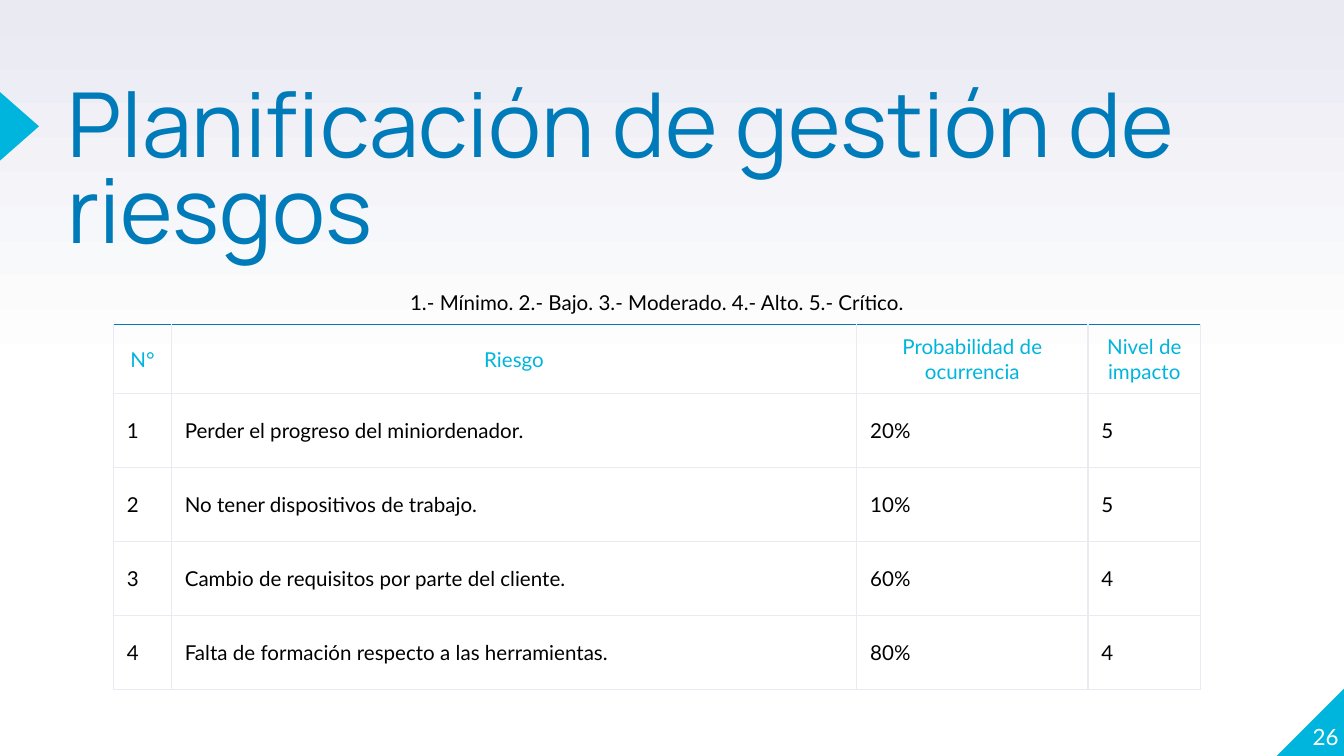
from typing import NamedTuple

from lxml.etree import SubElement
from pptx import Presentation
from pptx.dml.color import RGBColor
from pptx.enum.shapes import MSO_SHAPE as SHAPE
from pptx.enum.text import MSO_ANCHOR as ANCHOR, MSO_AUTO_SIZE as AUTO, PP_ALIGN as ALIGN
from pptx.oxml.ns import qn
from pptx.util import Pt

PX = 4572  # 200 px to the inch

WHITE = RGBColor(0xFF, 0xFF, 0xFF)
BLACK = RGBColor(0x00, 0x00, 0x00)
LAVENDER = RGBColor(0xE9, 0xEA, 0xF2)
CYAN = RGBColor(0x00, 0xB5, 0xDD)
BLUE = RGBColor(0x00, 0x7B, 0xB9)

HEADERS = ("N°", "Riesgo", "Probabilidad de ocurrencia", "Nivel de impacto")
COL_WIDTHS = (86, 1020, 344, 168)
HEADER_HEIGHT, ROW_HEIGHT = 103, 110


class Box(NamedTuple):
    x: int
    y: int
    w: int
    h: int

    def emu(self) -> list[int]:
        return [v * PX for v in self]


class Risk(NamedTuple):
    number: int
    name: str
    probability: str
    impact: int


class Style(NamedTuple):
    size: int
    color: RGBColor
    font: str = "Lato"
    align: ALIGN = ALIGN.LEFT
    spacing: float = 1.0


RISKS = (
    Risk(1, "Perder el progreso del miniordenador.", "20%", 5),
    Risk(2, "No tener dispositivos de trabajo.", "10%", 5),
    Risk(3, "Cambio de requisitos por parte del cliente.", "60%", 4),
    Risk(4, "Falta de formación respecto a las herramientas.", "80%", 4),
)
TITLE = Style(48, BLUE, "Manrope", spacing=0.8)
PAGE = Style(12, WHITE, align=ALIGN.RIGHT)
SCALE = Style(11, BLACK, align=ALIGN.CENTER, spacing=1.15)
HEAD = Style(11, CYAN, align=ALIGN.CENTER)
BODY = Style(11, BLACK, align=ALIGN.JUSTIFY)


def set_attrs(obj, values: dict) -> None:
    for name, value in values.items():
        setattr(obj, name, value)


def write(tf, text: str, style: Style) -> None:
    p = tf.paragraphs[0]
    set_attrs(p, {"alignment": style.align, "line_spacing": style.spacing})
    r = p.add_run()
    r.text = text
    set_attrs(r.font, {"name": style.font, "size": Pt(style.size)})
    r.font.color.rgb = style.color


def format_frame(tf, inset: int, anchor: ANCHOR = ANCHOR.TOP) -> None:
    margins = {f"margin_{side}": inset * PX for side in ("left", "top", "right", "bottom")}
    set_attrs(tf, {**margins, "word_wrap": True, "auto_size": AUTO.NONE, "vertical_anchor": anchor})


def add_text(slide, box: Box, text: str, style: Style, inset: int, anchor: ANCHOR = ANCHOR.TOP) -> None:
    tf = slide.shapes.add_textbox(*box.emu()).text_frame
    format_frame(tf, inset, anchor)
    write(tf, text, style)


def add_triangle(slide, kind: SHAPE, box: Box):
    sp = slide.shapes.add_shape(kind, *box.emu())
    sp.shadow.inherit = False
    sp.fill.solid()
    sp.fill.fore_color.rgb = CYAN
    sp.line.fill.background()
    return sp


def set_borders(cell, top: RGBColor) -> None:
    """Draw the four cell edges; they must precede the fill in the XML."""
    tc_pr = cell._tc.get_or_add_tcPr()
    for tag, color in (("lnL", LAVENDER), ("lnR", LAVENDER), ("lnT", top), ("lnB", LAVENDER)):
        ln = SubElement(tc_pr, qn(f"a:{tag}"), w=str(Pt(0.75)))
        fill = SubElement(ln, qn("a:solidFill"))
        SubElement(fill, qn("a:srgbClr"), val=str(color))
        SubElement(ln, qn("a:prstDash"), val="solid")


def add_risk_table(slide, x: int, y: int) -> None:
    rows = (HEADERS, *RISKS)
    heights = (HEADER_HEIGHT, *[ROW_HEIGHT] * len(RISKS))
    box = Box(x, y, sum(COL_WIDTHS), sum(heights))
    table = slide.shapes.add_table(len(rows), len(HEADERS), *box.emu()).table
    set_attrs(table, {"first_row": False, "horz_banding": False})
    for col, width in zip(table.columns, COL_WIDTHS):
        col.width = width * PX
    for i, (row, height, values) in enumerate(zip(table.rows, heights, rows)):
        row.height = height * PX
        for cell, value in zip(row.cells, values):
            set_attrs(cell, {"margin_left": 20 * PX, "margin_right": 20 * PX,
                             "margin_top": 14 * PX, "margin_bottom": 14 * PX,
                             "vertical_anchor": ANCHOR.MIDDLE})
            set_borders(cell, LAVENDER if i else BLUE)
            cell.fill.background()
            write(cell.text_frame, str(value), BODY if i else HEAD)


def set_background(slide) -> None:
    fill = slide.background.fill
    fill.gradient()
    fill.gradient_angle = 90
    for stop, position, color in zip(fill.gradient_stops, (0.5, 1.0), (WHITE, LAVENDER)):
        stop.position = position
        stop.color.rgb = color


def main() -> None:
    prs = Presentation()
    set_attrs(prs, {"slide_width": 2000 * PX, "slide_height": 1125 * PX})
    slide = prs.slides.add_slide(prs.slide_layouts[5])
    set_background(slide)

    corner = add_triangle(slide, SHAPE.RIGHT_TRIANGLE, Box(1900, 1023, 102, 102))
    corner._element.spPr.xfrm.set("flipH", "1")
    add_triangle(slide, SHAPE.ISOSCELES_TRIANGLE, Box(-22, 159, 102, 58)).rotation = 90

    title = slide.shapes.title
    set_attrs(title, dict(zip(("left", "top", "width", "height"), Box(100, 132, 1856, 236).emu())))
    format_frame(title.text_frame, 0)
    write(title.text_frame, "Planificación de gestión de riesgos", TITLE)

    add_text(slide, Box(1892, 1014, 100, 102), "26", PAGE, 0, ANCHOR.BOTTOM)
    add_text(slide, Box(114, 406, 1728, 102),
             "1.- Mínimo. 2.- Bajo. 3.- Moderado. 4.- Alto. 5.- Crítico.", SCALE, 20)
    add_risk_table(slide, 169, 483)
    prs.save("out.pptx")


if __name__ == "__main__":
    main()
